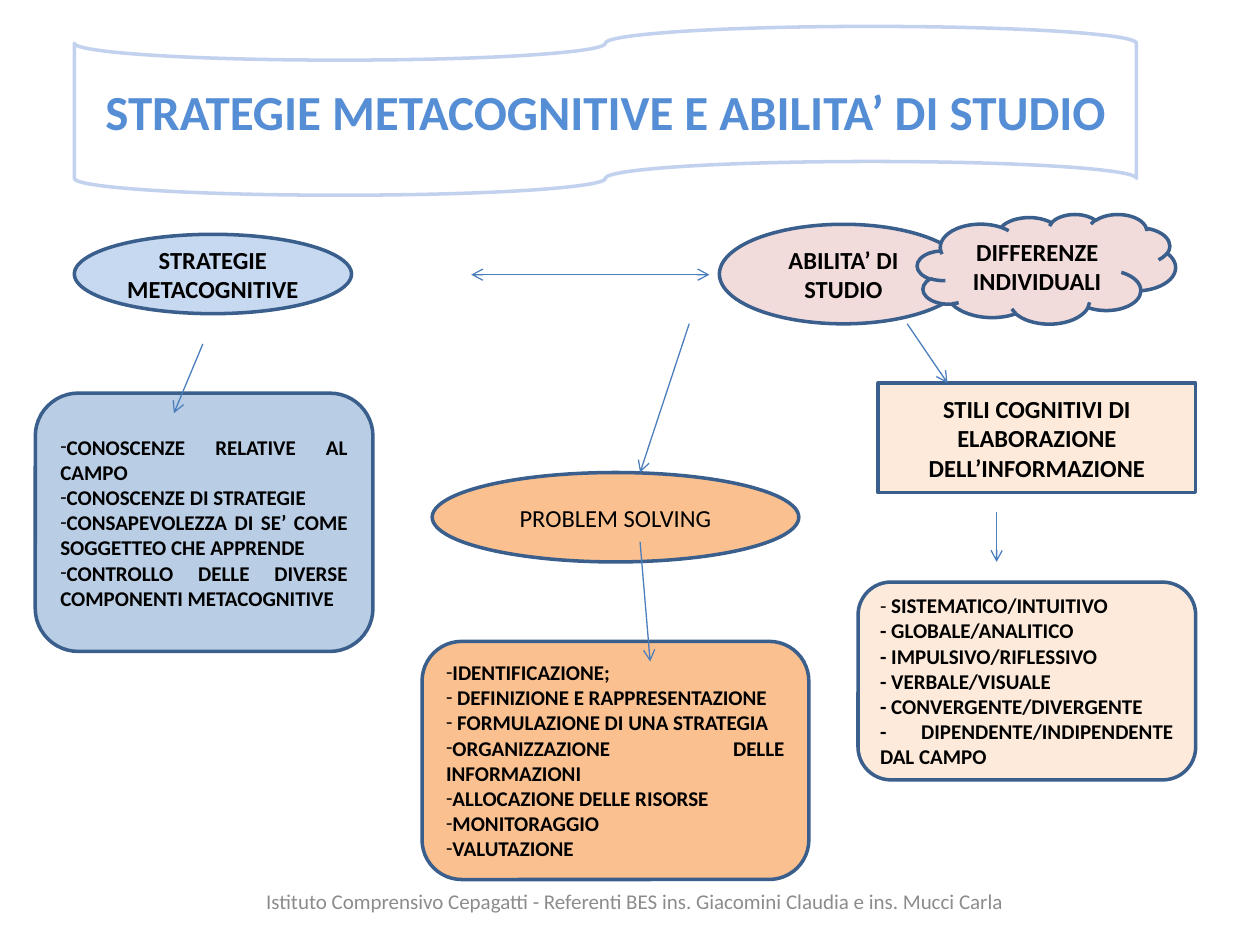
from lxml import etree
from pptx import Presentation
from pptx.dml.color import RGBColor
from pptx.enum import shapes, text
from pptx.oxml import ns
from pptx.util import Inches, Pt

FONT = "Calibri"
COLORS = {
    "outline": "3A5F8C", "arrow": "4B7EBC", "black": "000000",
    "title": "558ED5", "tape": "C2D1ED", "footer": "8C8C8C",
    "orange": "FAC090", "light_blue": "C6D9F1", "blue": "B9CDE5",
    "pink": "F2DCDB", "cream": "FDEADA",
}
SHAPE = shapes.MSO_SHAPE
ALIGN = text.PP_ALIGN

# Concept shapes: preset, place, fill, label, bold
CONCEPTS = [
    (SHAPE.OVAL, (3.43, 3.75, 2.91, 0.71), "orange", "PROBLEM SOLVING", False),
    (SHAPE.OVAL, (0.59, 1.86, 2.2, 0.63), "light_blue", "STRATEGIE METACOGNITIVE", True),
    (SHAPE.OVAL, (5.71, 1.78, 1.97, 0.79), "pink", "ABILITA’ DI STUDIO", True),
    (SHAPE.CLOUD, (7.28, 1.7, 2.05, 0.87), "pink", "DIFFERENZE INDIVIDUALI", True),
    (SHAPE.RECTANGLE, (6.97, 3.04, 2.52, 0.87), "cream",
     "STILI COGNITIVI DI ELABORAZIONE DELL’INFORMAZIONE", True),
]

STYLES = ["SISTEMATICO/INTUITIVO", "GLOBALE/ANALITICO", "IMPULSIVO/RIFLESSIVO",
          "VERBALE/VISUALE", "CONVERGENTE/DIVERGENTE",
          "DIPENDENTE/INDIPENDENTE DAL CAMPO"]
KNOWLEDGE = ["CONOSCENZE RELATIVE AL CAMPO", "CONOSCENZE DI STRATEGIE",
             "CONSAPEVOLEZZA DI SE’ COME SOGGETTEO CHE APPRENDE",
             "CONTROLLO DELLE DIVERSE COMPONENTI METACOGNITIVE"]
STEPS = ["IDENTIFICAZIONE;", " DEFINIZIONE E RAPPRESENTAZIONE",
         " FORMULAZIONE DI UNA STRATEGIA", "ORGANIZZAZIONE DELLE INFORMAZIONI",
         "ALLOCAZIONE DELLE RISORSE", "MONITORAGGIO", "VALUTAZIONE"]

# Arrows: start, end, arrowhead at both ends
ARROWS = [
    ((5.47, 2.57), (5.08, 3.75), False),
    ((7.2, 2.57), (7.52, 3.04), False),
    ((7.91, 4.06), (7.91, 4.46), False),
    ((1.61, 2.73), (1.38, 3.28), False),
    ((3.74, 2.18), (5.63, 2.18), True),
    ((5.08, 4.3), (5.16, 5.25), False),
]


def color(name):
    return RGBColor.from_string(COLORS[name])


def add_run(paragraph, words, size, ink="black", bold=False):
    run = paragraph.add_run()
    run.text = words
    run.font.name = FONT
    run.font.size = Pt(size)
    run.font.bold = bold
    run.font.color.rgb = color(ink)


def prepare_frame(shape):
    frame = shape.text_frame
    frame.word_wrap = True
    frame.vertical_anchor = text.MSO_ANCHOR.MIDDLE
    return frame


def add_label(shape, words, size, ink="black", bold=False):
    frame = prepare_frame(shape)
    # Narrow side margins keep the longest word whole inside an oval
    frame.margin_left = frame.margin_right = Inches(0.05)
    paragraph = frame.paragraphs[0]
    paragraph.alignment = ALIGN.CENTER
    add_run(paragraph, words, size, ink, bold)


def add_box(slide, preset, place, fill=None, outline="outline"):
    shape = slide.shapes.add_shape(preset, *map(Inches, place))
    shape.shadow.inherit = False
    if fill:
        shape.fill.solid()
        shape.fill.fore_color.rgb = color(fill)
    else:
        shape.fill.background()
    shape.line.color.rgb = color(outline)
    shape.line.width = Pt(2)
    return shape


def add_list(slide, place, fill, items, bulleted=True):
    """Rounded box with one justified paragraph per item."""
    shape = add_box(slide, SHAPE.FLOWCHART_ALTERNATE_PROCESS, place, fill)
    frame = prepare_frame(shape)
    for index, item in enumerate(items):
        paragraph = frame.add_paragraph() if index else frame.paragraphs[0]
        paragraph.alignment = ALIGN.JUSTIFY
        if bulleted:
            properties = paragraph._p.get_or_add_pPr()
            etree.SubElement(properties, ns.qn("a:buFont")).set("typeface", FONT)
            etree.SubElement(properties, ns.qn("a:buChar")).set("char", "-")
        else:
            add_run(paragraph, "- ", 12, bold=index > 0)
        add_run(paragraph, item, 12, bold=True)


def add_arrow(slide, start, end, both_ends):
    connector = slide.shapes.add_connector(
        shapes.MSO_CONNECTOR.STRAIGHT, *map(Inches, start + end))
    connector.line.color.rgb = color("arrow")
    connector.line.width = Pt(0.75)
    line = connector.line._get_or_add_ln()
    for tag in ("a:headEnd", "a:tailEnd") if both_ends else ("a:tailEnd",):
        etree.SubElement(line, ns.qn(tag)).set("type", "arrow")
    etree.SubElement(connector._element.spPr, ns.qn("a:effectLst"))


def main():
    presentation = Presentation()
    presentation.slide_width = Inches(10)
    presentation.slide_height = Inches(7.5)
    slide = presentation.slides.add_slide(presentation.slide_layouts[6])

    # Footer
    footer = slide.shapes.add_textbox(*map(Inches, (0.51, 6.95, 9.06, 0.4)))
    add_label(footer, "Istituto Comprensivo Cepagatti - Referenti BES "
              "ins. Giacomini Claudia e ins. Mucci Carla", 12, "footer")

    # Title banner
    banner = add_box(slide, SHAPE.FLOWCHART_PUNCHED_TAPE,
                     (0.59, 0.21, 8.43, 1.34), outline="tape")
    add_label(banner, "STRATEGIE METACOGNITIVE E ABILITA’ DI STUDIO", 28, "title", True)

    # Concepts
    for preset, place, fill, label, bold in CONCEPTS:
        add_label(add_box(slide, preset, place, fill), label, 14, bold=bold)

    # Detail lists
    add_list(slide, (6.81, 4.62, 2.68, 1.57), "cream", STYLES, bulleted=False)
    add_list(slide, (0.28, 3.12, 2.68, 2.05), "blue", KNOWLEDGE)
    add_list(slide, (3.35, 5.09, 3.07, 1.89), "orange", STEPS)

    # Arrows
    for start, end, both_ends in ARROWS:
        add_arrow(slide, start, end, both_ends)

    presentation.save("out.pptx")


if __name__ == "__main__":
    main()
